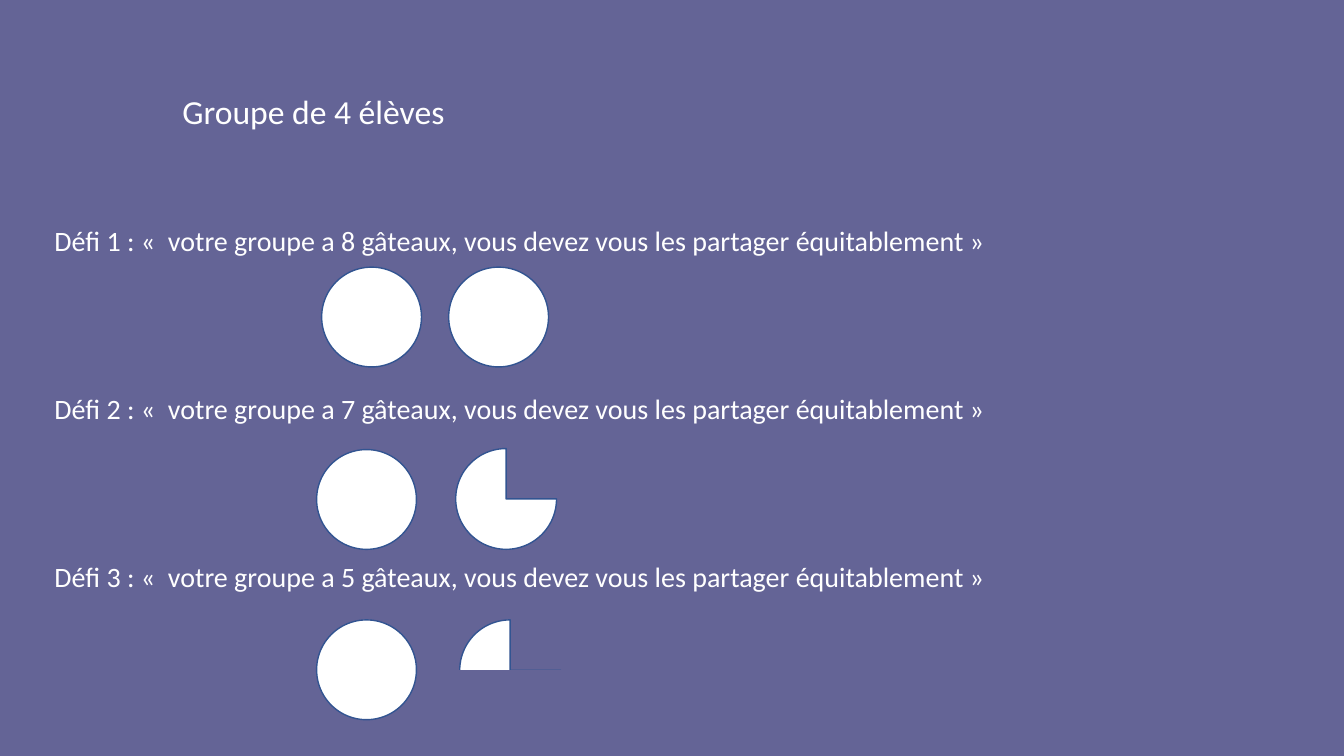
from dataclasses import dataclass

from lxml.etree import SubElement
from pptx import Presentation
from pptx.dml.color import RGBColor
from pptx.enum.shapes import MSO_SHAPE
from pptx.enum.text import MSO_ANCHOR, MSO_AUTO_SIZE, PP_ALIGN
from pptx.oxml.ns import qn
from pptx.util import Inches, Pt


@dataclass(frozen=True)
class Theme:
    background: RGBColor = RGBColor(0x64, 0x64, 0x96)
    white: RGBColor = RGBColor(0xFF, 0xFF, 0xFF)
    outline: RGBColor = RGBColor(0x32, 0x54, 0x91)
    font: str = "Calibri"
    title_size: int = 24
    body_size: int = 20


THEME = Theme()
CAKE = 0.99
PIE = 1
CAKE_COUNTS = (8, 7, 5)


def place(shape, left, top, width, height):
    shape.left, shape.top = Inches(left), Inches(top)
    shape.width, shape.height = Inches(width), Inches(height)


def prepare_frame(placeholder, margin_left=0.1):
    frame = placeholder.text_frame
    frame.word_wrap = True
    frame.auto_size = MSO_AUTO_SIZE.NONE
    frame.vertical_anchor = MSO_ANCHOR.TOP
    frame.margin_left = Inches(margin_left)
    return frame


def write_paragraph(para, text, size, space_before=0):
    properties = para._p.get_or_add_pPr()
    properties.set("marL", "0")
    properties.set("indent", "0")
    SubElement(properties, qn("a:buNone"))
    para.alignment = PP_ALIGN.LEFT
    para.line_spacing = 1.0
    para.space_before = Pt(space_before)
    span = para.add_run()
    span.text = text
    span.font.name = THEME.font
    span.font.size = Pt(size)
    span.font.color.rgb = THEME.white


def add_figure(page, kind, left, top, width, height,
               fill=THEME.white, line=THEME.outline):
    shape = page.shapes.add_shape(kind, Inches(left), Inches(top),
                                  Inches(width), Inches(height))
    shape.shadow.inherit = False
    shape.fill.solid()
    shape.fill.fore_color.rgb = fill
    shape.line.color.rgb = line
    shape.line.width = Pt(1)


def add_cake(page, left, top):
    add_figure(page, MSO_SHAPE.OVAL, left, top, CAKE, CAKE)


def add_three_quarters(page, left, top):
    # The preset pie leaves out its upper right quarter
    add_figure(page, MSO_SHAPE.PIE, left, top, PIE, PIE)


def add_quarter(page, left, top):
    # A band in the background colour leaves only the upper left quarter
    add_three_quarters(page, left, top)
    add_figure(page, MSO_SHAPE.RECTANGLE, left - 0.11, top + PIE / 2, 1.32, 0.61,
               fill=THEME.background, line=THEME.background)


def main():
    deck = Presentation()
    deck.slide_width, deck.slide_height = Inches(13.33), Inches(7.5)
    page = deck.slides.add_slide(deck.slide_layouts[1])
    page.background.fill.solid()
    page.background.fill.fore_color.rgb = THEME.background

    # Title
    title = page.shapes.title
    place(title, 1.56, 0.85, 6.67, 0.5)
    frame = prepare_frame(title, margin_left=0.25)
    write_paragraph(frame.paragraphs[0], "Groupe de 4 élèves", THEME.title_size)

    # Challenges, spaced to leave room for the cakes
    body = page.placeholders[1]
    place(body, 0.44, 2.17, 9.6, 3.8)
    frame = prepare_frame(body)
    for number, count in enumerate(CAKE_COUNTS, start=1):
        first = number == 1
        para = frame.paragraphs[0] if first else frame.add_paragraph()
        text = (f"Défi {number} : «  votre groupe a {count} gâteaux, "
                "vous devez vous les partager équitablement »")
        write_paragraph(para, text, THEME.body_size, space_before=0 if first else 96)

    # Each pupil's share
    add_cake(page, 3.19, 2.65)
    add_cake(page, 4.45, 2.65)
    add_cake(page, 3.14, 4.46)
    add_three_quarters(page, 4.52, 4.45)
    add_cake(page, 3.14, 6.15)
    add_quarter(page, 4.56, 6.15)

    deck.save("out.pptx")


if __name__ == "__main__":
    main()
